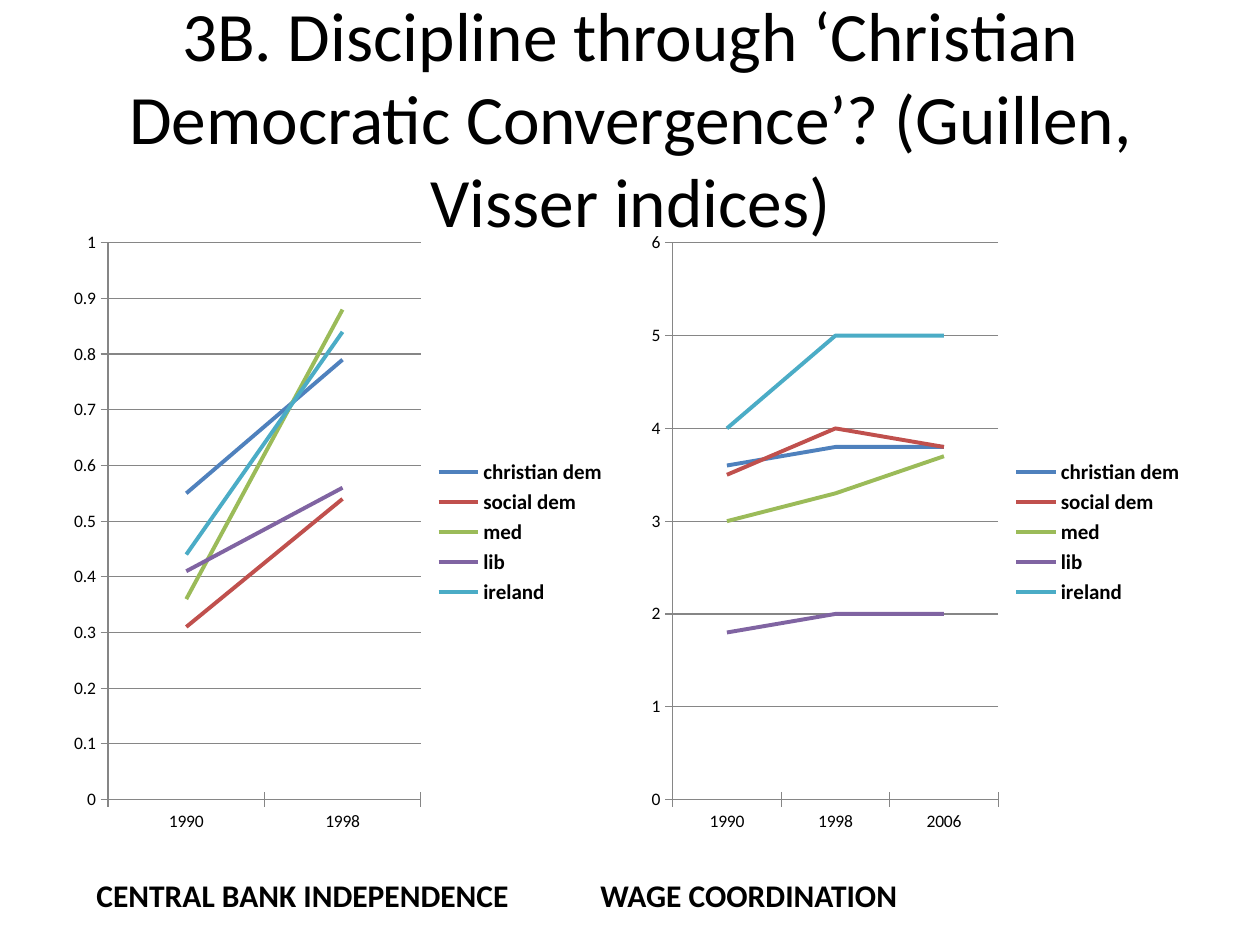
from dataclasses import dataclass

from pptx import Presentation
from pptx.chart.data import CategoryChartData
from pptx.dml.color import RGBColor
from pptx.enum.chart import XL_CHART_TYPE as ChartType
from pptx.enum.chart import XL_LEGEND_POSITION as LegendPos
from pptx.enum.chart import XL_TICK_MARK as Tick
from pptx.enum.text import MSO_ANCHOR as Anchor
from pptx.enum.text import PP_ALIGN as Align
from pptx.util import Pt

FONT = "Calibri"
COLORS = {
    "text": "000000",
    "axis": "868686",
    "christian dem": "4F81BD",
    "social dem": "C0504D",
    "med": "9BBB59",
    "lib": "8064A2",
    "ireland": "4BACC6",
}


@dataclass
class LinePanel:
    left: float
    years: list[str]
    values: dict[str, list[float]]
    top_value: float
    step: float


@dataclass
class Label:
    text: str
    box: tuple[float, float, float, float]
    size: float
    bold: bool
    align: Align
    anchor: Anchor


def rgb(name: str) -> RGBColor:
    return RGBColor.from_string(COLORS[name])


def style_font(font, size: float, bold: bool = False) -> None:
    font.name, font.size, font.bold = FONT, Pt(size), bold
    font.color.rgb = rgb("text")


def style_line(line, color: str, width: float) -> None:
    line.color.rgb = rgb(color)
    line.width = Pt(width)


def add_label(slide, label: Label) -> None:
    tf = slide.shapes.add_textbox(*map(Pt, label.box)).text_frame
    tf.word_wrap = True
    tf.vertical_anchor = label.anchor
    p = tf.paragraphs[0]
    p.alignment = label.align
    r = p.add_run()
    r.text = label.text
    style_font(r.font, label.size, label.bold)


def add_panel(slide, panel: LinePanel) -> None:
    data = CategoryChartData()
    data.categories = panel.years
    for name, values in panel.values.items():
        data.add_series(name, values)
    chart = slide.shapes.add_chart(
        ChartType.LINE, Pt(panel.left), Pt(126), Pt(318), Pt(356.4), data
    ).chart
    chart.has_title = False
    style_font(chart.font, 10)

    # Legend
    chart.has_legend = True
    chart.legend.position = LegendPos.RIGHT
    chart.legend.include_in_layout = False
    style_font(chart.legend.font, 12, bold=True)

    # Axes
    for axis in (chart.category_axis, chart.value_axis):
        axis.major_tick_mark = Tick.CROSS
        style_line(axis.format.line, "axis", 0.75)
    axis = chart.value_axis
    axis.minimum_scale, axis.maximum_scale = 0, panel.top_value
    axis.major_unit = panel.step
    axis.has_major_gridlines = True
    style_line(axis.major_gridlines.format.line, "axis", 0.75)

    # Series
    plot = chart.plots[0]
    plot.vary_by_categories = False
    for series in plot.series:
        series.smooth = False
        style_line(series.format.line, series.name, 2.25)


LABELS = [
    Label(
        "3B. Discipline through ‘Christian Democratic Convergence’? "
        "(Guillen, Visser indices)",
        (14.4, 21.6, 692, 90), 39.6, False, Align.CENTER, Anchor.MIDDLE,
    ),
    Label(
        "CENTRAL BANK INDEPENDENCE\t\tWAGE COORDINATION",
        (48, 496.8, 635, 29), 18, True, Align.LEFT, Anchor.TOP,
    ),
]

PANELS = [
    LinePanel(
        36, ["1990", "1998"],
        {
            "christian dem": [0.55, 0.79],
            "social dem": [0.31, 0.54],
            "med": [0.36, 0.88],
            "lib": [0.41, 0.56],
            "ireland": [0.44, 0.84],
        },
        1, 0.1,
    ),
    LinePanel(
        366, ["1990", "1998", "2006"],
        {
            "christian dem": [3.6, 3.8, 3.8],
            "social dem": [3.5, 4, 3.8],
            "med": [3, 3.3, 3.7],
            "lib": [1.8, 2, 2],
            "ireland": [4, 5, 5],
        },
        6, 1,
    ),
]


def main() -> None:
    prs = Presentation()
    prs.slide_width, prs.slide_height = Pt(720), Pt(540)
    s = prs.slides.add_slide(prs.slide_layouts[6])
    title, caption = LABELS
    add_label(s, title)
    for panel in PANELS:
        add_panel(s, panel)
    add_label(s, caption)
    prs.save("out.pptx")


if __name__ == "__main__":
    main()
